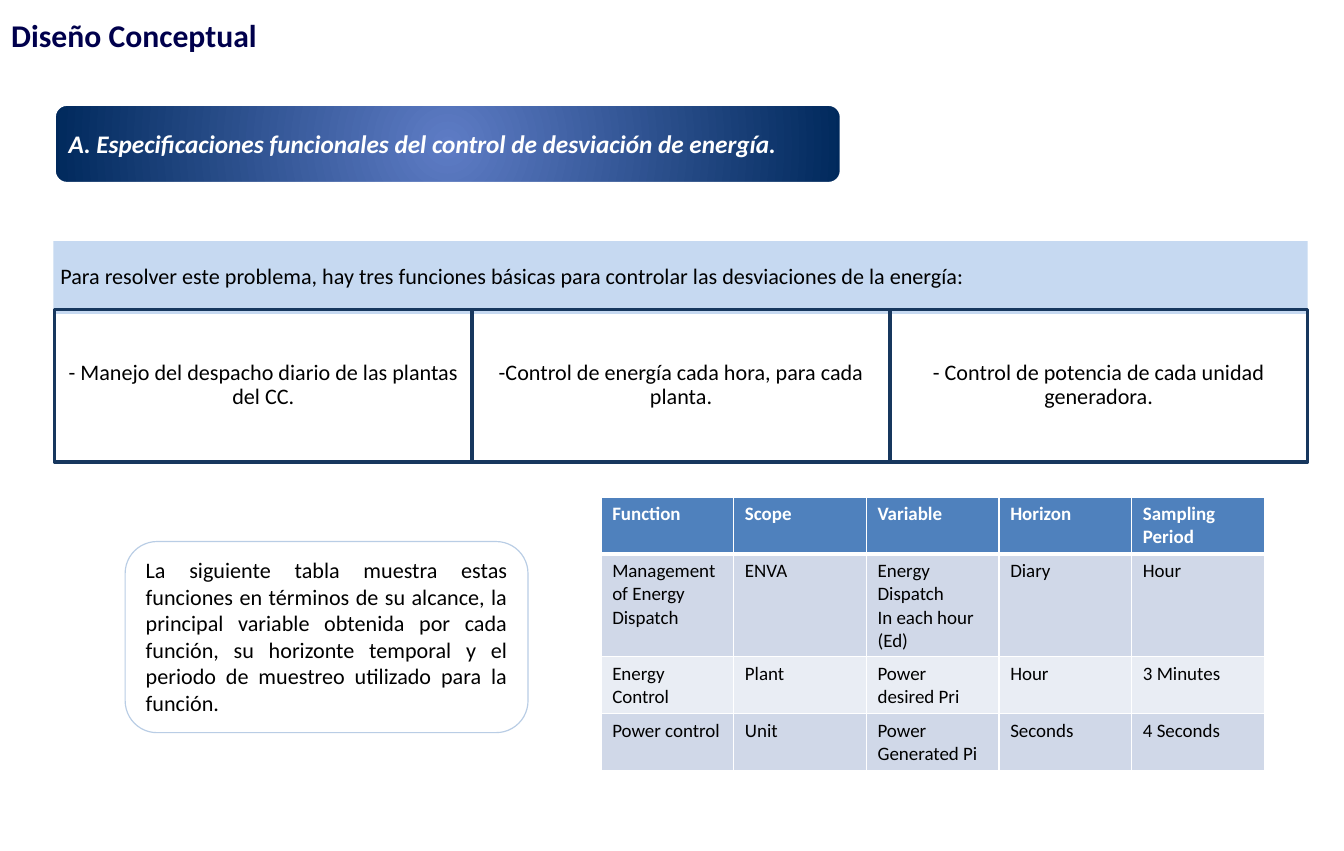
from lxml import etree
from pptx import Presentation
from pptx.dml.color import RGBColor
from pptx.enum.shapes import MSO_SHAPE as Preset
from pptx.enum.text import MSO_ANCHOR as Anchor, MSO_AUTO_SIZE as AutoSize, PP_ALIGN as Align
from pptx.oxml import parse_xml
from pptx.oxml.ns import nsdecls, qn
from pptx.util import Inches, Pt


def color(value):
    return RGBColor.from_string(value)


def write(frame, text, size, ink="000000", bold=False, italic=False, align=Align.LEFT,
          anchor=Anchor.MIDDLE, spacing=None):
    frame.word_wrap = True
    frame.vertical_anchor = anchor
    for index, line in enumerate(text.split("\n")):
        paragraph = frame.add_paragraph() if index else frame.paragraphs[0]
        paragraph.alignment = align
        paragraph.line_spacing = spacing
        run = paragraph.add_run()
        run.text = line
        run.font.name = "Calibri"
        run.font.size = Pt(size)
        run.font.bold = bold
        run.font.italic = italic
        run.font.color.rgb = color(ink)


presentation = Presentation()
presentation.slide_width = Inches(11.81)
presentation.slide_height = Inches(7.48)
slide = presentation.slides.add_slide(presentation.slide_layouts[6])
shapes = slide.shapes

banner = shapes.add_shape(Preset.ROUNDED_RECTANGLE, Inches(0.47), Inches(0.91), Inches(6.93), Inches(0.71))
banner.shadow.inherit = False
banner.fill.gradient()
for stop, shade in zip(banner.fill.gradient_stops, ("5E7CC5", "00295C")):
    stop.color.rgb = color(shade)
linear = next(banner.element.spPr.iter(qn("a:lin")))
linear.getparent().replace(linear, parse_xml(
    f'<a:path {nsdecls("a")} path="circle"><a:fillToRect l="50000" t="50000" r="50000" b="50000"/></a:path>'))
banner.line.color.rgb = color("FFFFFF")
banner.line.width = Pt(3)
write(banner.text_frame, "A. Especificaciones funcionales del control de desviación de energía.",
      16, "FFFFFF", bold=True, italic=True)

note = shapes.add_shape(Preset.ROUNDED_RECTANGLE, Inches(1.1), Inches(4.76), Inches(3.54), Inches(1.68))
note.shadow.inherit = False
note.fill.background()
note.line.color.rgb = color("B9CDE5")
note.line.width = Pt(0.75)
write(note.text_frame,
      "La siguiente tabla muestra estas funciones en términos de su alcance, la principal "
      "variable obtenida por cada función, su horizonte temporal y el periodo de muestreo "
      "utilizado para la función.",
      14, align=Align.JUSTIFY, anchor=Anchor.TOP)
note.text_frame.auto_size = AutoSize.SHAPE_TO_FIT_TEXT

function_width = 3.67
panels = [(0.47, 2.12, 11.02, 0.64, "C6D9F1", None, Align.LEFT,
           "Para resolver este problema, hay tres funciones básicas para controlar "
           "las desviaciones de la energía:")]
functions = ["- Manejo del despacho diario de las plantas del CC.",
             "-Control de energía cada hora, para cada planta.",
             "- Control de potencia de cada unidad generadora."]
for index, text in enumerate(functions):
    panels.append((0.48 + index * function_width, 2.72, function_width, 1.34,
                   None, "17375E", Align.CENTER, text))

for left, top, width, height, fill, outline, align, text in panels:
    panel = shapes.add_shape(Preset.RECTANGLE, Inches(left), Inches(top), Inches(width), Inches(height))
    panel.shadow.inherit = False
    if fill:
        panel.fill.solid()
        panel.fill.fore_color.rgb = color(fill)
    else:
        panel.fill.background()
    if outline:
        panel.line.color.rgb = color(outline)
        panel.line.width = Pt(2.25)
    else:
        panel.line.fill.background()
    frame = panel.text_frame
    frame.margin_left = frame.margin_right = frame.margin_top = frame.margin_bottom = Inches(0.06)
    write(frame, text, 14, align=align, spacing=0.9)

title = shapes.add_textbox(Inches(0), Inches(-0.28), Inches(8.56), Inches(1.17))
write(title.text_frame, "Diseño Conceptual", 20, "00004C", bold=True)

rows = [
    ["Function", "Scope", "Variable", "Horizon", "Sampling Period"],
    ["Management of Energy Dispatch", "ENVA", "Energy Dispatch\nIn each hour (Ed)", "Diary", "Hour"],
    ["Energy Control", "Plant", "Power desired Pri", "Hour", "3 Minutes"],
    ["Power control", "Unit", "Power Generated Pi", "Seconds", "4 Seconds"],
]
row_heights = [0.5, 0.9, 0.5, 0.5]
row_fills = ["4F81BD", "D0D8E8", "E9EDF4", "D0D8E8"]
table = shapes.add_table(len(rows), len(rows[0]), Inches(5.28), Inches(4.37),
                         Inches(5.83), Inches(sum(row_heights))).table
for column in table.columns:
    column.width = Inches(5.83 / len(rows[0]))
for row_index, texts in enumerate(rows):
    header = row_index == 0
    table.rows[row_index].height = Inches(row_heights[row_index])
    for column_index, text in enumerate(texts):
        cell = table.cell(row_index, column_index)
        properties = cell._tc.get_or_add_tcPr()
        for side in "LRTB":
            thick = (header and side == "B") or (row_index == 1 and side == "T")
            border = etree.SubElement(properties, qn(f"a:ln{side}"), w=str(Pt(3 if thick else 1)))
            border_fill = etree.SubElement(border, qn("a:solidFill"))
            etree.SubElement(border_fill, qn("a:srgbClr"), val="FFFFFF")
        cell.fill.solid()
        cell.fill.fore_color.rgb = color(row_fills[row_index])
        write(cell.text_frame, text, 12, "FFFFFF" if header else "000000", bold=header, anchor=Anchor.TOP)
        cell.vertical_anchor = Anchor.TOP

presentation.save("out.pptx")
